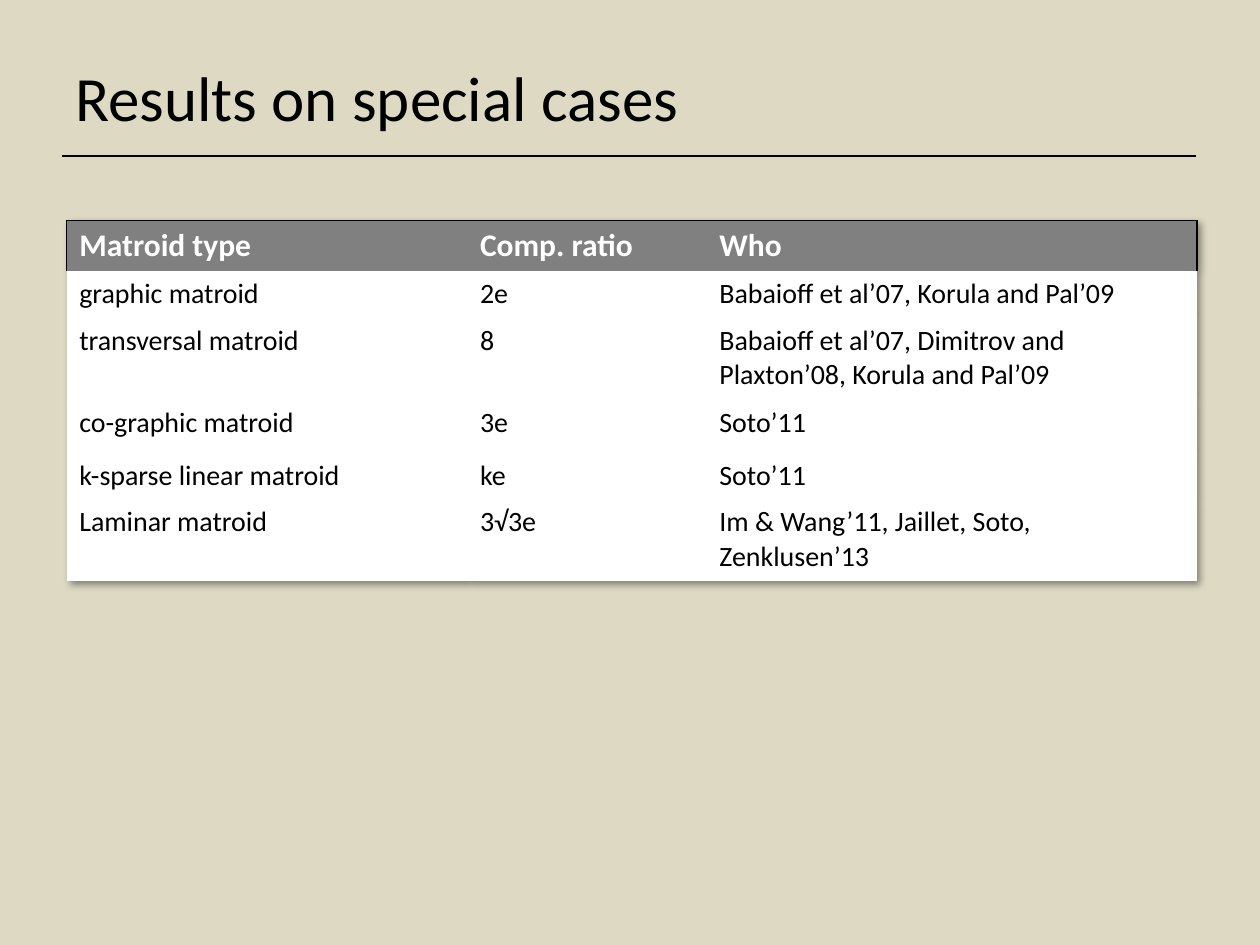
"""Build a slide with a table of competitive ratios for special matroids."""
from lxml import etree
from pptx import Presentation
from pptx.dml.color import RGBColor
from pptx.enum import shapes, text
from pptx.oxml import ns, parse_xml
from pptx.util import Inches, Pt

FONT = "Calibri"
BLACK = RGBColor(0x00, 0x00, 0x00)
WHITE = RGBColor(0xFF, 0xFF, 0xFF)
GRAY = RGBColor(0x80, 0x80, 0x80)
SAND = RGBColor(0xDD, 0xD9, 0xC3)

TITLE = "Results on special cases"
RESULTS = [
    ("Matroid type", "Comp. ratio", "Who"),
    ("graphic matroid", "2e", "Babaioff et al’07, Korula and Pal’09"),
    ("transversal matroid", "8",
     "Babaioff et al’07, Dimitrov and Plaxton’08, Korula and Pal’09"),
    ("co-graphic matroid", "3e", "Soto’11"),
    ("k-sparse linear matroid", "ke", "Soto’11"),
    ("Laminar matroid", "3√3e", "Im & Wang’11, Jaillet, Soto, Zenklusen’13"),
]
COLUMN_WIDTHS = [3.18, 1.9, 3.89]
ROW_HEIGHTS = [0.4, 0.37, 0.65, 0.42, 0.37, 0.65]
NO_GRID_STYLE = "{2D5ABB26-0587-4C30-8999-92F81FD0307C}"
SHADOW = (
    f'<a:effectLst {ns.nsdecls("a")}>'
    '<a:outerShdw blurRad="50800" dist="38100" dir="2700000" algn="tl">'
    '<a:srgbClr val="000000"><a:alpha val="40000"/></a:srgbClr>'
    '</a:outerShdw></a:effectLst>'
)


def set_font(paragraph, size, color, bold=False):
    font = paragraph.font
    font.name, font.size, font.bold = FONT, Pt(size), bold
    font.color.rgb = color


def add_borders(cell, sides):
    properties = cell._tc.get_or_add_tcPr()
    for position, side in enumerate(sides):
        properties.insert(position, parse_xml(
            f'<a:ln{side} {ns.nsdecls("a")} w="{Pt(0.75)}"><a:solidFill>'
            f'<a:srgbClr val="{BLACK}"/></a:solidFill></a:ln{side}>'))


def add_title(slide):
    rule = slide.shapes.add_connector(
        shapes.MSO_CONNECTOR.STRAIGHT,
        Inches(0.49), Inches(1.24), Inches(9.49), Inches(1.24))
    rule.line.color.rgb = BLACK
    rule.line.width = Pt(1)
    etree.SubElement(rule._element.spPr, ns.qn("a:effectLst"))

    title = slide.shapes.add_textbox(
        Inches(0.5), Inches(0.3), Inches(9), Inches(0.93)).text_frame
    title.word_wrap = True
    title.vertical_anchor = text.MSO_ANCHOR.MIDDLE
    title.text = TITLE
    set_font(title.paragraphs[0], 36, BLACK)


def add_results(slide):
    results = slide.shapes.add_table(
        len(RESULTS), len(COLUMN_WIDTHS), Inches(0.53), Inches(1.75),
        Inches(sum(COLUMN_WIDTHS)), Inches(sum(ROW_HEIGHTS))).table
    results.horz_banding = False
    table_properties = results._tbl.tblPr
    table_properties.find(ns.qn("a:tableStyleId")).text = NO_GRID_STYLE
    table_properties.insert(0, parse_xml(SHADOW))
    for column, width in zip(results.columns, COLUMN_WIDTHS):
        column.width = Inches(width)
    for row, height in zip(results.rows, ROW_HEIGHTS):
        row.height = Inches(height)

    for r, entries in enumerate(RESULTS):
        header = r == 0
        for c, entry in enumerate(entries):
            cell = results.cell(r, c)
            cell.text = entry
            cell.fill.solid()
            cell.fill.fore_color.rgb = GRAY if header else WHITE
            set_font(cell.text_frame.paragraphs[0], 18 if header else 16,
                     WHITE if header else BLACK, header)
    for c, sides in enumerate(["LT", "T", "RT"]):
        add_borders(results.cell(0, c), sides)


def main():
    deck = Presentation()
    deck.slide_width, deck.slide_height = Inches(10), Inches(7.5)
    slide = deck.slides.add_slide(deck.slide_layouts[6])
    slide.background.fill.solid()
    slide.background.fill.fore_color.rgb = SAND
    add_title(slide)
    add_results(slide)
    deck.save("out.pptx")


if __name__ == "__main__":
    main()
